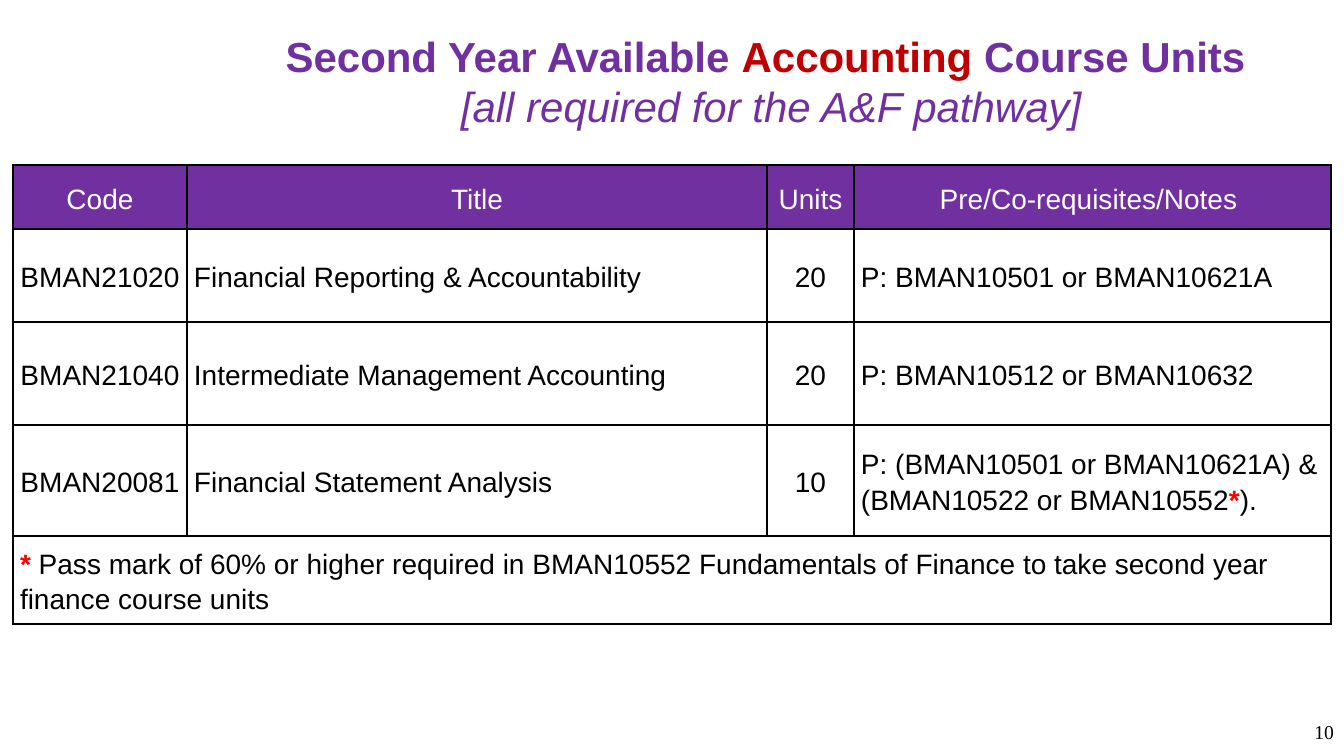
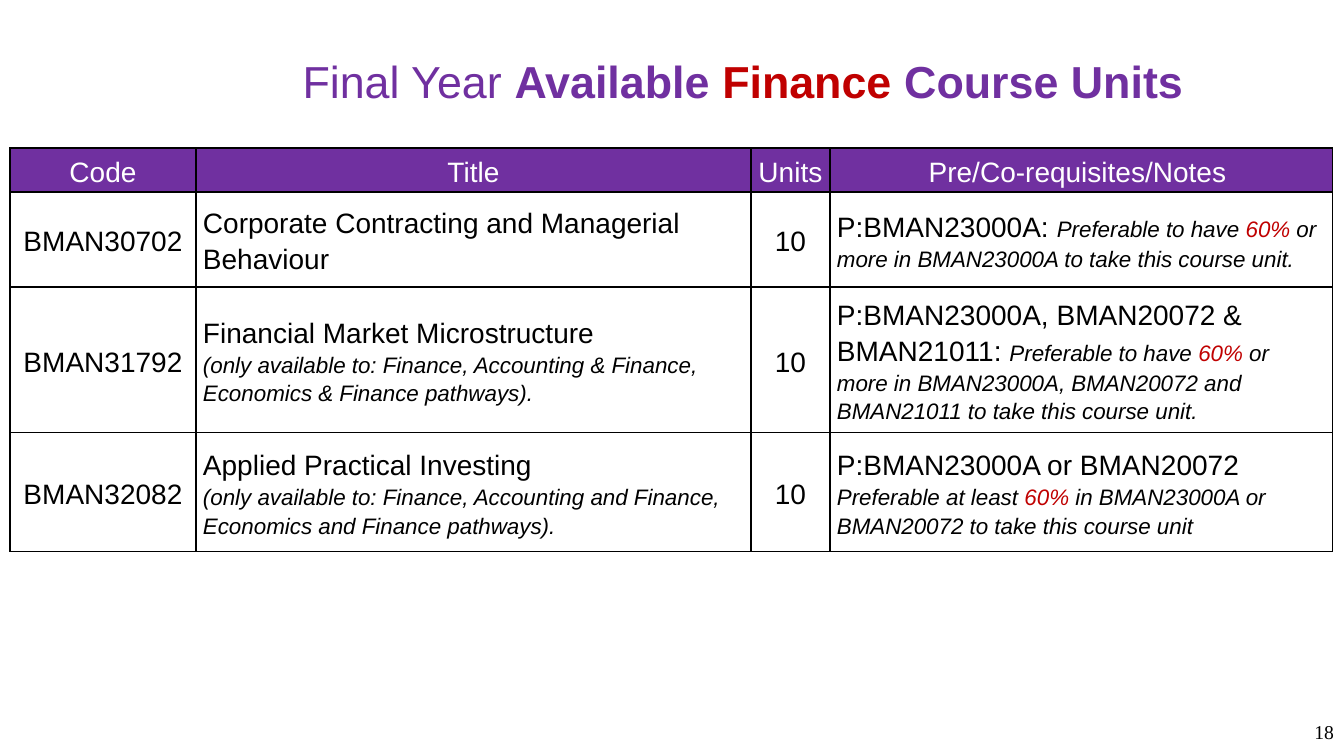
from pptx import Presentation
from pptx.dml.color import RGBColor as RGB
from pptx.enum.text import MSO_ANCHOR as Anchor, PP_ALIGN as Align
from pptx.oxml import parse_xml
from pptx.oxml.ns import nsdecls
from pptx.util import Pt

SCALE = 914400 / 100.8
WIDE, HIGH = 1344, 756
HUES = {"main": "7030A0", "key": "C00000", "star": "FF0000",
        "ink": "000000", "pale": "FFFFFF"}
HEAD = ["Code", "Title", "Units", "Pre/Co-requisites/Notes "]
BOLD = {"bold": True}
KEY = {"hue": "key", "bold": True}
STAR = {"hue": "star", "bold": True}
SMALL = {"size": 16, "ital": True}
MARK = {**SMALL, "hue": "key"}


def px(count):
    return round(count * SCALE)


class Deck:
    """Holds the style and the current slide."""

    def __init__(self):
        self.file = Presentation()
        self.file.slide_width, self.file.slide_height = px(WIDE), px(HIGH)

    def page(self, number):
        self.slide = self.file.slides.add_slide(self.file.slide_layouts[6])
        self.text(1134, 707, 210, 50, [[str(number)]], Align.RIGHT,
                  size=14, font="Times New Roman")

    def run(self, para, words, size=20, hue="ink", bold=False, ital=False, font="Arial"):
        run = para.add_run()
        run.text = words
        face = run.font
        face.name, face.size, face.bold, face.italic = font, Pt(size), bold, ital
        face.color.rgb = RGB.from_string(HUES[hue])

    def fill(self, frame, paras, align, space=1.0, **base):
        frame.word_wrap = True
        for at, runs in enumerate(paras):
            para = frame.add_paragraph() if at else frame.paragraphs[0]
            para.alignment, para.line_spacing = align, space
            for item in runs:
                words, style = (item, {}) if isinstance(item, str) else item
                self.run(para, words, **{**base, **style})

    def text(self, left, top, width, height, paras, align, **base):
        box = self.slide.shapes.add_textbox(px(left), px(top), px(width), px(height))
        box.text_frame.vertical_anchor = Anchor.MIDDLE
        self.fill(box.text_frame, paras, align, **base)

    def title(self, left, width, paras, size):
        self.text(left, 30, width, 102, paras, Align.CENTER, size=size, hue="main")

    def edge(self, cell):
        props = cell._tc.get_or_add_tcPr()
        for side in "LRTB":
            props.append(parse_xml(
                f'<a:ln{side} {nsdecls("a")} w="12700"><a:solidFill>'
                f'<a:srgbClr val="{HUES["ink"]}"/></a:solidFill></a:ln{side}>'))

    def cell(self, cell, body, head, mid):
        self.edge(cell)
        cell.vertical_anchor = Anchor.MIDDLE
        cell.margin_left = cell.margin_right = px(7)
        cell.margin_top = cell.margin_bottom = 0
        if head:
            cell.fill.solid()
            cell.fill.fore_color.rgb = RGB.from_string(HUES["main"])
        else:
            cell.fill.background()
        paras = [[body]] if isinstance(body, str) else body
        self.fill(cell.text_frame, paras, Align.CENTER if mid else Align.LEFT,
                  space=1.15, hue="pale" if head else "ink")

    def table(self, left, top, cols, tall, rows):
        grid = self.slide.shapes.add_table(
            len(tall), len(cols), px(left), px(top), px(sum(cols)), px(sum(tall))).table
        grid.first_row = grid.horz_banding = False
        for col, width in zip(grid.columns, cols):
            col.width = px(width)
        for y, (height, row) in enumerate(zip(tall, [HEAD] + rows)):
            grid.rows[y].height = px(height)
            whole = len(row) == 1
            if whole:
                grid.cell(y, 0).merge(grid.cell(y, len(cols) - 1))
            for x in range(len(cols)):
                if x < len(row):
                    mid = y == 0 or (x in (0, 2) and not whole)
                    self.cell(grid.cell(y, x), row[x], y == 0, mid)
                else:
                    self.edge(grid.cell(y, x))


def main():
    deck = Deck()

    deck.page(10)
    deck.title(204, 1135, [
        [("Second Year Available ", BOLD), ("Accounting", KEY), (" Course Units ", BOLD)],
        [("[all required for the A&F pathway]", {"ital": True})]], 30)
    deck.table(13, 165, [174, 580, 87, 477], [64, 93, 103, 111, 88], [
        ["BMAN21020", "Financial Reporting & Accountability", "20",
         "P: BMAN10501 or BMAN10621A"],
        ["BMAN21040 ", "Intermediate Management Accounting", "20",
         "P: BMAN10512 or BMAN10632"],
        ["BMAN20081 ", "Financial Statement Analysis", "10",
         [["P: (BMAN10501 or BMAN10621A) & (BMAN10522 or BMAN10552", ("*", STAR), ")."]]],
        [[[("* ", STAR), "Pass mark of 60% or higher required in BMAN10552 Fundamentals "
           "of Finance to take second year finance course units"]]]])

    deck.page(18)
    deck.title(142, 1202, [
        ["Final Year ", ("Available ", BOLD), ("Finance", KEY), (" Course Units", BOLD)]], 32)
    deck.table(10, 148, [186, 555, 79, 503], [44, 95, 146, 119], [
        ["BMAN30702", "Corporate Contracting and Managerial Behaviour", "10",
         [["P:BMAN23000A: ", ("Preferable to have ", SMALL), ("60% ", MARK),
           ("or more in BMAN23000A to take this course unit.", SMALL)]]],
        ["BMAN31792",
         [["Financial Market Microstructure"],
          [("(only available to: Finance, Accounting & Finance, "
            "Economics & Finance pathways).", SMALL)]], "10",
         [["P:BMAN23000A, BMAN20072 & BMAN21011: ", ("Preferable to have ", SMALL),
           ("60% ", MARK), ("or more in BMAN23000A, BMAN20072 and BMAN21011 "
                            "to take this course unit.", SMALL)]]],
        ["BMAN32082",
         [["Applied Practical Investing"],
          [("(only available to: Finance, Accounting and Finance, "
            "Economics and Finance pathways).", SMALL)]], "10",
         [["P:BMAN23000A or BMAN20072"],
          [("Preferable at least ", SMALL), ("60% ", MARK),
           ("in BMAN23000A or BMAN20072 to take this course unit", SMALL)]]]])

    deck.file.save("out.pptx")


if __name__ == "__main__":
    main()
